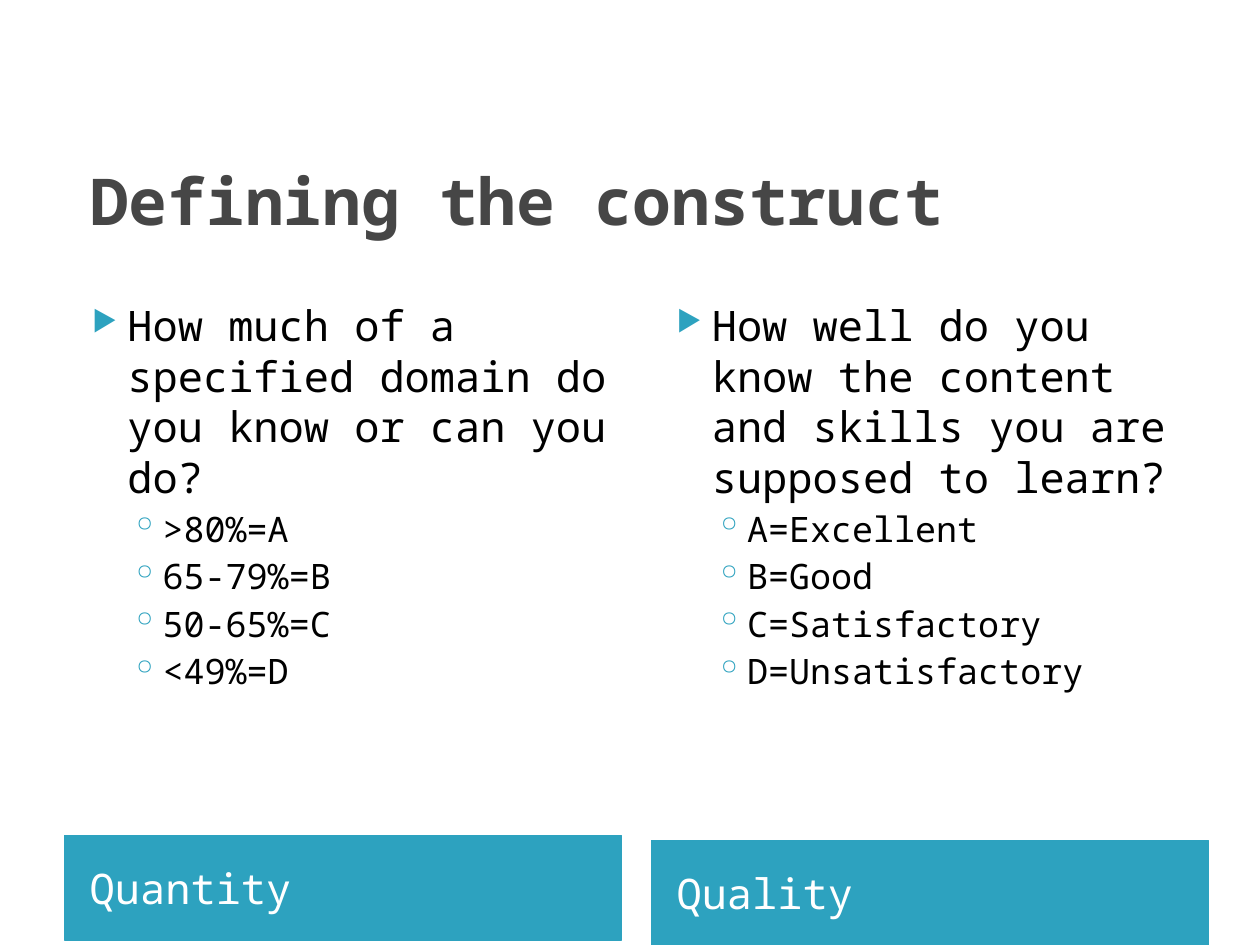
from lxml import etree
from pptx import Presentation
from pptx.dml.color import RGBColor
from pptx.enum.shapes import MSO_SHAPE
from pptx.enum.text import MSO_ANCHOR, PP_ALIGN
from pptx.oxml.ns import qn
from pptx.util import Cm, Pt

RECTANGLE = MSO_SHAPE.RECTANGLE
MIDDLE = MSO_ANCHOR.MIDDLE
LEFT = PP_ALIGN.LEFT
FONT = "Noto Sans Mono"
COLORS = {"title": "464646", "accent": "2DA2BF", "label": "FFFFFF", "body": "000000"}
COLUMN_WIDTH = Cm(11.23)


def format_runs(paragraph, size, color, bold=False):
    paragraph.alignment = LEFT
    for run in paragraph.runs:
        run.font.name = FONT
        run.font.size = Pt(size)
        run.font.bold = bold
        run.font.color.rgb = RGBColor.from_string(COLORS[color])


def add_bullet(paragraph, character, margin, indent, percent):
    properties = paragraph._p.get_or_add_pPr()
    properties.set("marL", str(Cm(margin)))
    properties.set("indent", str(Cm(indent)))
    color = etree.SubElement(properties, qn("a:buClr"))
    etree.SubElement(color, qn("a:srgbClr"), val=COLORS["accent"])
    etree.SubElement(properties, qn("a:buSzPct"), val=str(percent * 1000))
    etree.SubElement(properties, qn("a:buChar"), char=character)


presentation = Presentation()
presentation.slide_width = Cm(25.4)
presentation.slide_height = Cm(19.05)
slide = presentation.slides.add_slide(presentation.slide_layouts[6])

title = slide.shapes.add_textbox(Cm(1.57), Cm(3.12), Cm(22.86), Cm(1.8))
title.text_frame.word_wrap = True
title.text_frame.vertical_anchor = MIDDLE
title.text_frame.text = "Defining the construct"
format_runs(title.text_frame.paragraphs[0], 36.9, "title", True)

columns = [
    ("Quantity", 1.3, 16.84, 1.3,
     "How much of a specified domain do you know or can you do?",
     [">80%=A", "65-79%=B", "50-65%=C", "<49%=D"]),
    ("Quality", 13.13, 16.94, 13.08,
     "How well do you know the content and skills you are supposed to learn?",
     ["A=Excellent", "B=Good", "C=Satisfactory", "D=Unsatisfactory"]),
]

for label, label_left, label_top, body_left, question, grades in columns:
    shape = slide.shapes.add_shape(
        RECTANGLE, Cm(label_left), Cm(label_top), COLUMN_WIDTH, Cm(2.11))
    shape.shadow.inherit = False
    shape.fill.solid()
    shape.fill.fore_color.rgb = RGBColor.from_string(COLORS["accent"])
    shape.line.color.rgb = RGBColor.from_string(COLORS["accent"])
    shape.line.width = Pt(0.75)
    shape.text_frame.margin_left = Cm(0.51)
    shape.text_frame.vertical_anchor = MIDDLE
    shape.text_frame.text = label
    format_runs(shape.text_frame.paragraphs[0], 24, "label")

    body = slide.shapes.add_textbox(Cm(body_left), Cm(5.92), COLUMN_WIDTH, Cm(10.95))
    body.text_frame.word_wrap = True
    body.text_frame.text = "\n".join([question, *grades])
    first, *others = body.text_frame.paragraphs
    add_bullet(first, "▶", 1.02, -0.71, 68)
    format_runs(first, 24, "body")
    for paragraph in others:
        paragraph.level = 1
        add_bullet(paragraph, "◦", 1.73, -0.64, 100)
        paragraph.space_before = Pt(3.2)
        format_runs(paragraph, 20, "body")

presentation.save("out.pptx")
